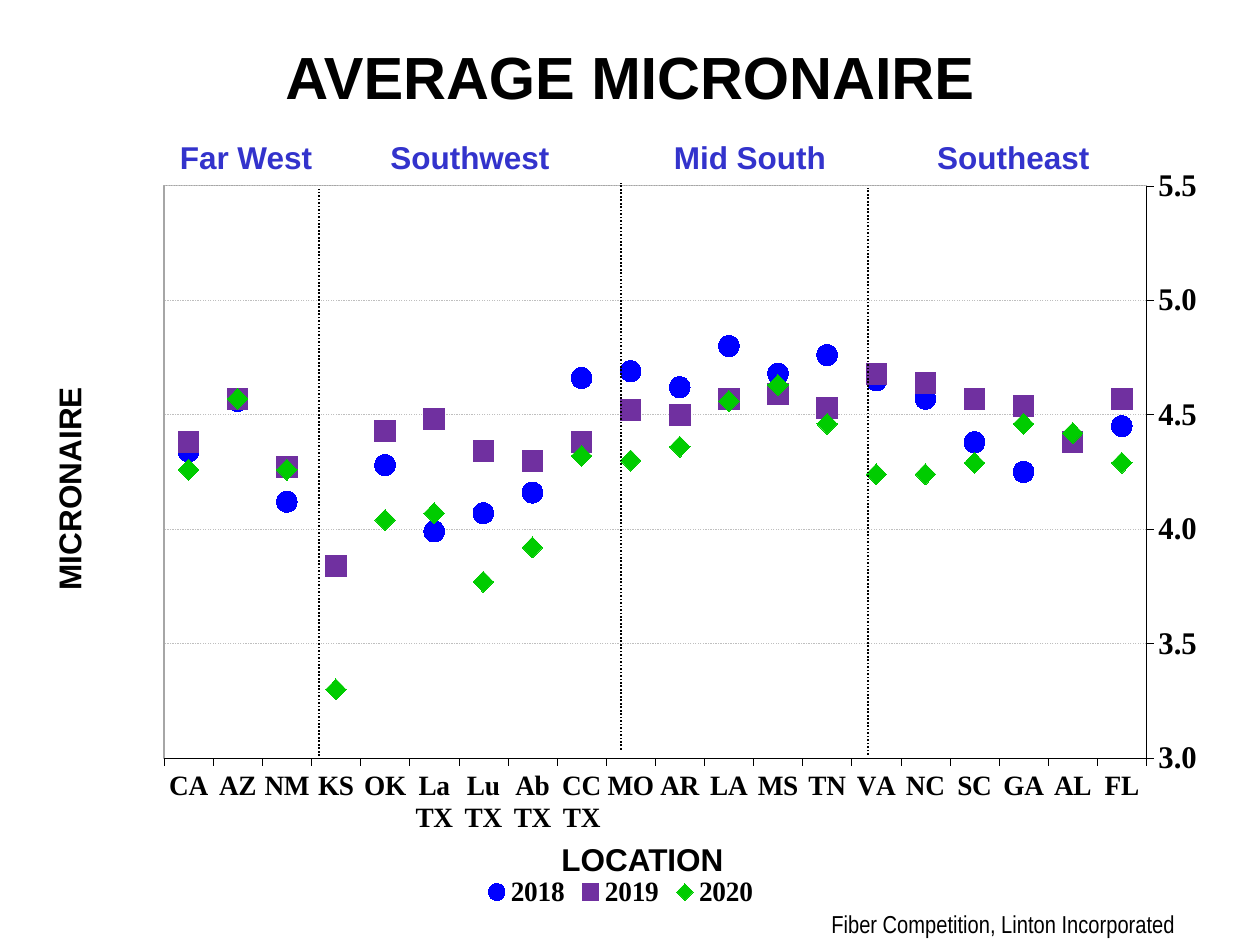
"""Builds the average micronaire slide: a marker chart by state with region dividers."""
from lxml.etree import SubElement
from pptx import Presentation
from pptx.chart.data import CategoryChartData
from pptx.dml.color import RGBColor
from pptx.enum.chart import (XL_AXIS_CROSSES, XL_CHART_TYPE, XL_LEGEND_POSITION,
                             XL_MARKER_STYLE, XL_TICK_MARK)
from pptx.enum.dml import MSO_LINE
from pptx.enum.shapes import MSO_CONNECTOR
from pptx.enum.text import MSO_ANCHOR, MSO_AUTO_SIZE, PP_ALIGN
from pptx.oxml import parse_xml
from pptx.oxml.ns import nsdecls, qn
from pptx.util import Pt

COLORS = {"black": "000000", "region": "3333CC", "grid": "BFBFBF", "frame": "A6A6A6",
          "2018": "0000FF", "2019": "7030A0", "2020": "00CC00"}
TITLE = "AVERAGE MICRONAIRE"
SOURCE = "Fiber Competition, Linton Incorporated"
STATES = ["FL", "AL", "GA", "SC", "NC", "VA", "TN", "MS", "LA", "AR", "MO", "CC TX",
          "Ab TX", "Lu TX", "La TX", "OK", "KS", "NM", "AZ", "CA"]
SERIES = [
    ("2018", XL_MARKER_STYLE.CIRCLE,
     [4.45, 4.38, 4.25, 4.38, 4.57, 4.65, 4.76, 4.68, 4.8, 4.62,
      4.69, 4.66, 4.16, 4.07, 3.99, 4.28, 3.84, 4.12, 4.56, 4.34]),
    ("2019", XL_MARKER_STYLE.SQUARE,
     [4.57, 4.38, 4.54, 4.57, 4.64, 4.68, 4.53, 4.59, 4.57, 4.5,
      4.52, 4.38, 4.3, 4.34, 4.48, 4.43, 3.84, 4.27, 4.57, 4.38]),
    ("2020", XL_MARKER_STYLE.DIAMOND,
     [4.29, 4.42, 4.46, 4.29, 4.24, 4.24, 4.46, 4.63, 4.56, 4.36,
      4.3, 4.32, 3.92, 3.77, 4.07, 4.04, 3.3, 4.26, 4.57, 4.26]),
]
REGIONS = [("Far West", 95.7, 91), ("Southwest", 216, 106.5),
           ("Mid South", 378, 102), ("Southeast", 528.5, 102)]
DIVIDERS = [(182.2, 108), (355, 104.4), (496.1, 107.3)]
DIVIDER_HEIGHT = 324
AXIS_TITLES = [("MICRONAIRE", -18.7, 268.5, 116, 270), ("LOCATION", 320.4, 480.2, 93.6, 0)]
PLOT = {"x": 0.083, "y": 0.076, "w": 0.897, "h": 0.727}


def color(name):
    return RGBColor.from_string(COLORS[name])


def style_font(font, size, name="Arial", bold=True, fill="black"):
    font.size, font.name, font.bold = Pt(size), name, bold
    font.color.rgb = color(fill)


def style_line(line, fill, width, dash=None):
    line.color.rgb = color(fill)
    line.width = Pt(width)
    if dash:
        line.dash_style = dash


def add_label(page, text, left, top, width, height, fill="black", rotation=0, inset=None):
    box = page.shapes.add_textbox(Pt(left), Pt(top), Pt(width), Pt(height))
    box.rotation = rotation
    frame = box.text_frame
    frame.word_wrap = False
    frame.auto_size = MSO_AUTO_SIZE.SHAPE_TO_FIT_TEXT
    para = frame.paragraphs[0]
    para.text = text
    style_font(para.font, 18, fill=fill)
    if inset is not None:
        frame.margin_left = frame.margin_right = Pt(inset)
        frame.margin_top = frame.margin_bottom = Pt(inset)
        para.alignment = PP_ALIGN.CENTER


def add_title(page):
    title = page.shapes.title
    title.left, title.top, title.width, title.height = Pt(54), Pt(-2), Pt(612), Pt(90)
    frame = title.text_frame
    frame.vertical_anchor = MSO_ANCHOR.MIDDLE
    para = frame.paragraphs[0]
    para.alignment = PP_ALIGN.CENTER
    span = para.add_run()
    span.text = TITLE
    style_font(span.font, 34)
    shadow = parse_xml(
        f'<a:effectLst {nsdecls("a")}><a:outerShdw dist="38100" dir="2700000" algn="tl">'
        '<a:srgbClr val="808080"/></a:outerShdw></a:effectLst>')
    span.font.fill  
    properties = para.runs[0]._r.get_or_add_rPr()
    properties.find(qn("a:solidFill")).addnext(shadow)


def place_plot(chart):
    plot_area = chart._chartSpace.chart.plotArea
    for old in plot_area.findall(qn("c:layout")):
        plot_area.remove(old)
    layout = parse_xml(f'<c:layout {nsdecls("c")}><c:manualLayout/></c:layout>')
    settings = [("layoutTarget", "inner"), ("xMode", "edge"), ("yMode", "edge"), *PLOT.items()]
    for tag, value in settings:
        SubElement(layout[0], qn(f"c:{tag}")).set("val", str(value))
    plot_area.insert(0, layout)
    plot_area.append(parse_xml(
        f'<c:spPr {nsdecls("c", "a")}><a:noFill/><a:ln w="9525"><a:solidFill>'
        f'<a:srgbClr val="{COLORS["frame"]}"/></a:solidFill></a:ln></c:spPr>'))


def add_micronaire_chart(page):
    data = CategoryChartData(number_format="0.00")
    data.categories = STATES
    for year, _, values in SERIES:
        data.add_series(year, values)
    chart = page.shapes.add_chart(XL_CHART_TYPE.LINE_MARKERS, Pt(41.8), Pt(72),
                                  Pt(642.2), Pt(450), data).chart
    style_font(chart.font, 10, "Times New Roman", False)
    chart.has_title = False
    chart.has_legend = True
    chart.legend.position = XL_LEGEND_POSITION.BOTTOM
    chart.legend.include_in_layout = False
    style_font(chart.legend.font, 16, "Times New Roman")
    chart.plots[0].vary_by_categories = False

    for series, (year, marker_style, _) in zip(chart.plots[0].series, SERIES):
        series.smooth = False
        series.format.line.fill.background()
        marker = series.marker
        marker.style, marker.size = marker_style, 12
        marker.format.fill.solid()
        marker.format.fill.fore_color.rgb = color(year)
        marker.format.line.color.rgb = color(year)

    states, values = chart.category_axis, chart.value_axis
    for axis, size, dash in ((states, 16, None), (values, 18, MSO_LINE.ROUND_DOT)):
        axis.major_tick_mark = XL_TICK_MARK.OUTSIDE
        axis.minor_tick_mark = XL_TICK_MARK.NONE
        style_font(axis.tick_labels.font, size, "Times New Roman")
        style_line(axis.format.line, "black", 0.25, dash)
    states.reverse_order = True
    states.crosses = XL_AXIS_CROSSES.MAXIMUM
    values.minimum_scale, values.maximum_scale, values.major_unit = 3, 5.5, 0.5
    values.tick_labels.number_format = "#,##0.0"
    values.tick_labels.number_format_is_linked = False
    values.has_major_gridlines = True
    style_line(values.major_gridlines.format.line, "grid", 0.75, MSO_LINE.ROUND_DOT)
    place_plot(chart)


def add_divider(page, left, top):
    divider = page.shapes.add_connector(MSO_CONNECTOR.STRAIGHT, Pt(left),
                                        Pt(top + DIVIDER_HEIGHT), Pt(left), Pt(top))
    style_line(divider.line, "black", 1, MSO_LINE.ROUND_DOT)
    SubElement(divider._element.spPr, qn("a:effectLst"))


def add_source(page):
    box = page.shapes.add_textbox(Pt(468), Pt(516), Pt(252), Pt(24))
    box.text_frame.word_wrap = True
    para = box.text_frame.paragraphs[0]
    para.text = SOURCE
    style_font(para.font, 14, "Arial Narrow", False)


def main():
    deck = Presentation()
    deck.slide_width, deck.slide_height = Pt(720), Pt(540)
    page = deck.slides.add_slide(deck.slide_layouts[5])
    add_micronaire_chart(page)
    add_title(page)
    for left, top in DIVIDERS:
        add_divider(page, left, top)
    for text, left, top, width, rotation in AXIS_TITLES:
        add_label(page, text, left, top, width, 21.6, rotation=rotation, inset=0)
    for name, left, width in REGIONS:
        add_label(page, name, left, 75.6, width, 28.8, fill="region")
    add_source(page)
    deck.save("out.pptx")


if __name__ == "__main__":
    main()
